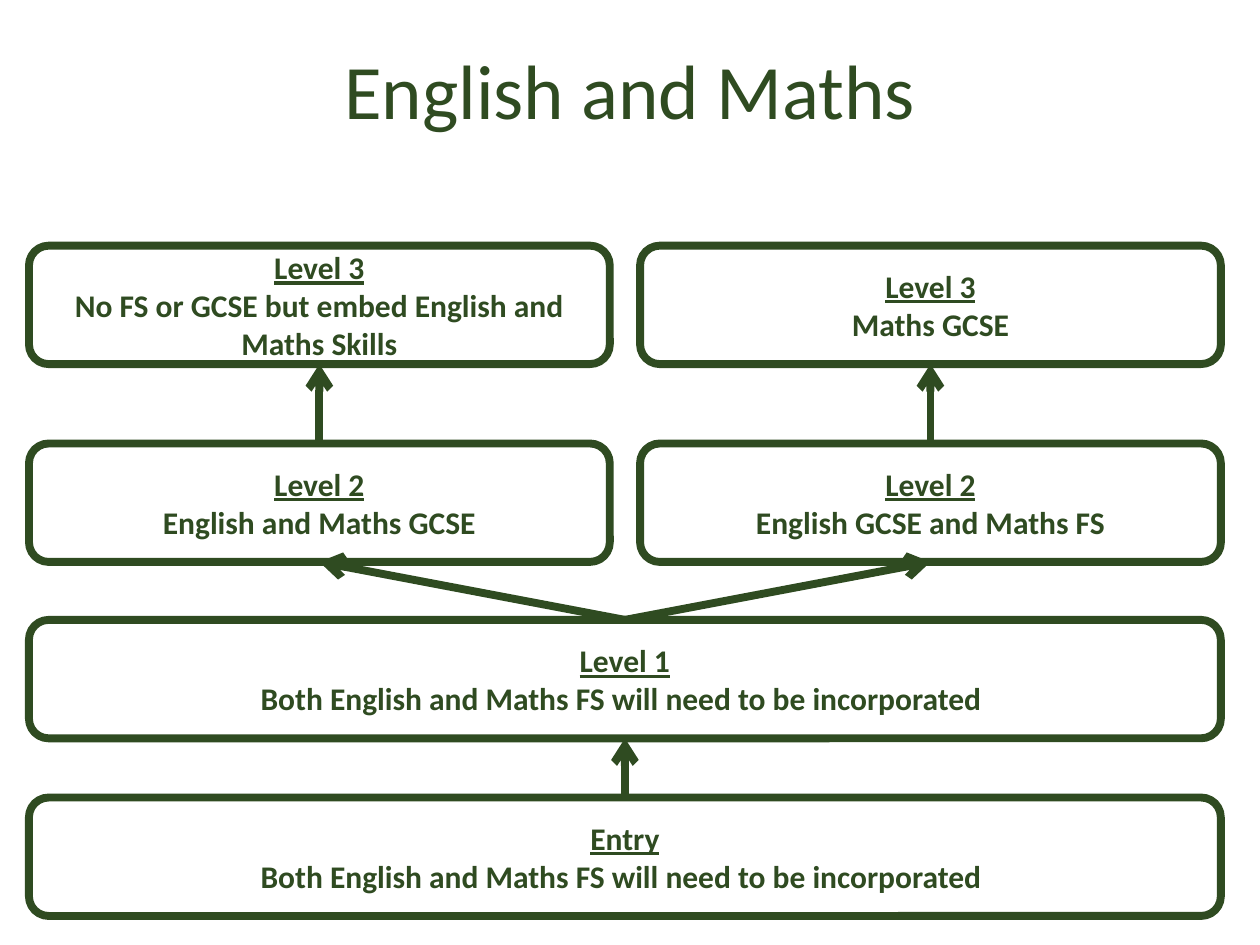
from dataclasses import dataclass

from lxml.etree import SubElement
from pptx import Presentation
from pptx.dml.color import RGBColor
from pptx.enum.shapes import MSO_CONNECTOR as Connector, MSO_SHAPE as Shape
from pptx.enum.text import MSO_ANCHOR as Anchor, PP_ALIGN as Align
from pptx.oxml.ns import qn
from pptx.util import Inches, Pt


@dataclass(frozen=True)
class Theme:
    green: RGBColor = RGBColor(0x2F, 0x4B, 0x21)
    font: str = "Calibri"
    title_size: int = 44
    body_size: int = 18
    line_width: float = 4.5


@dataclass(frozen=True)
class Grid:
    left: float = 0.23
    column_width: float = 4.61
    gutter: float = 0.24
    row_tops: tuple = (1.95, 3.52, 4.92, 6.33)
    row_height: float = 0.94

    def cell(self, column: int, row: int, span: int) -> list:
        step = self.column_width + self.gutter
        box = (self.left + column * step, self.row_tops[row],
               span * step - self.gutter, self.row_height)
        return [Inches(length) for length in box]


@dataclass(frozen=True)
class Level:
    key: str
    column: int
    row: int
    span: int
    heading: str
    detail: str


THEME = Theme()
GRID = Grid()
TOP, BOTTOM = 0, 2
INCORPORATED = "Both English and Maths FS will need to be incorporated "

LEVELS = [
    Level("embed", 0, 0, 1, "Level 3", "No FS or GCSE but embed English and Maths Skills"),
    Level("maths", 1, 0, 1, "Level 3", "Maths GCSE"),
    Level("both", 0, 1, 1, "Level 2", "English and Maths GCSE"),
    Level("english", 1, 1, 1, "Level 2", "English GCSE and Maths FS"),
    Level("level 1", 0, 2, 2, "Level 1", INCORPORATED),
    Level("entry", 0, 3, 2, "Entry", INCORPORATED),
]
PROGRESSIONS = [("both", "embed"), ("english", "maths"), ("level 1", "both"),
                ("level 1", "english"), ("entry", "level 1")]


def write(paragraph, text: str, size: int, **extra) -> None:
    paragraph.alignment = Align.CENTER
    run = paragraph.add_run()
    run.text = text
    run.font.color.rgb = THEME.green
    for attribute, value in {"name": THEME.font, "size": Pt(size), **extra}.items():
        setattr(run.font, attribute, value)


def style_line(line) -> None:
    line.color.rgb = THEME.green
    line.width = Pt(THEME.line_width)


def prepare_frame(frame) -> None:
    for attribute, value in {"word_wrap": True, "vertical_anchor": Anchor.MIDDLE}.items():
        setattr(frame, attribute, value)


def draw_title(slide, text: str, width: int, height: int) -> None:
    title = slide.shapes.add_textbox(int(width * 0.05), int(height * 0.01),
                                     int(width * 0.9), int(height / 6))
    prepare_frame(title.text_frame)
    write(title.text_frame.paragraphs[0], text, THEME.title_size)


def draw_level(slide, level: Level):
    box = slide.shapes.add_shape(Shape.ROUNDED_RECTANGLE,
                                 *GRID.cell(level.column, level.row, level.span))
    box.shadow.inherit = False
    box.fill.background()
    style_line(box.line)
    frame = box.text_frame
    prepare_frame(frame)
    write(frame.paragraphs[0], level.heading, THEME.body_size, bold=True, underline=True)
    write(frame.add_paragraph(), level.detail, THEME.body_size, bold=True)
    return box


def draw_progression(slide, lower, upper) -> None:
    arrow = slide.shapes.add_connector(Connector.STRAIGHT, 0, 0, 0, 0)
    arrow.begin_connect(lower, TOP)
    arrow.end_connect(upper, BOTTOM)
    style_line(arrow.line)
    SubElement(arrow.line._get_or_add_ln(), qn("a:tailEnd"), type="arrow")
    SubElement(arrow._element.spPr, qn("a:effectLst"))


def main() -> None:
    deck = Presentation()
    deck.slide_width, deck.slide_height = Inches(10), Inches(7.5)
    slide = deck.slides.add_slide(deck.slide_layouts[6])

    # Title
    draw_title(slide, "English and Maths", deck.slide_width, deck.slide_height)

    # Level boxes, then the routes between them
    boxes = {level.key: draw_level(slide, level) for level in LEVELS}
    for lower, upper in PROGRESSIONS:
        draw_progression(slide, boxes[lower], boxes[upper])

    deck.save("out.pptx")


if __name__ == "__main__":
    main()
